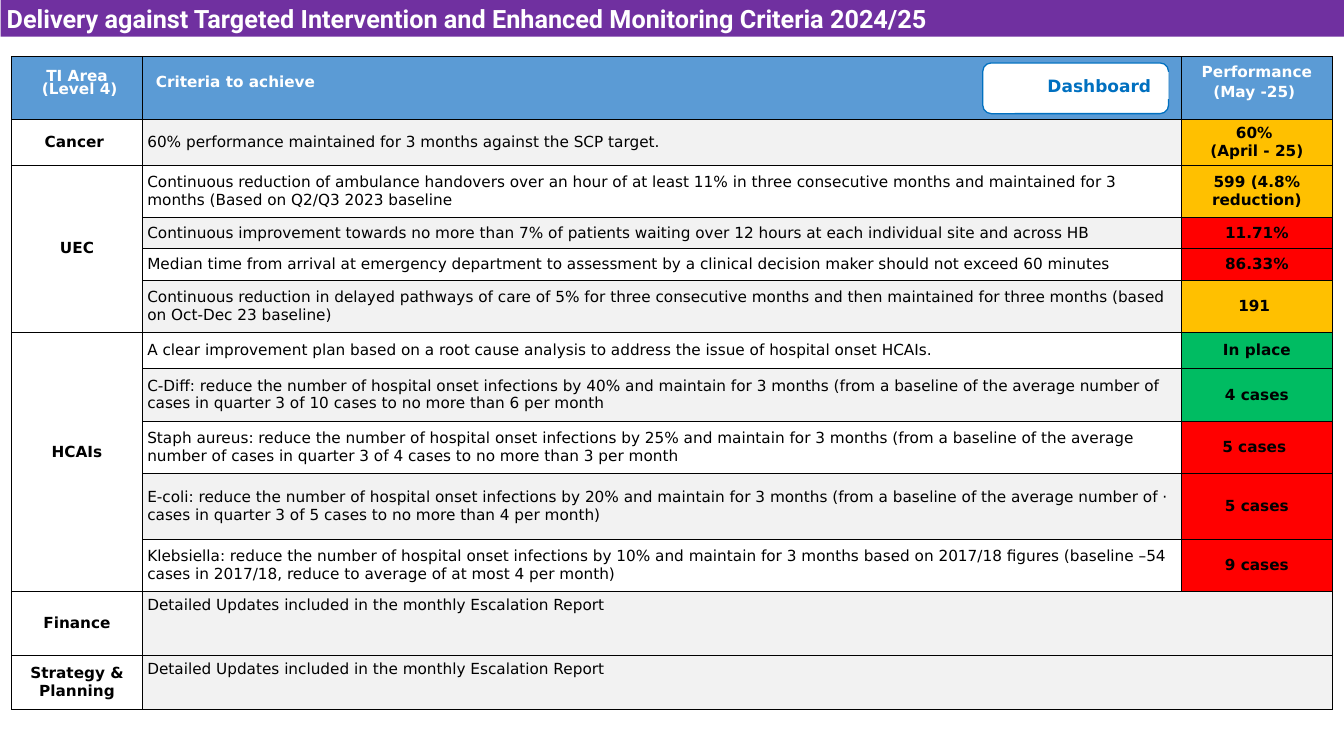
from lxml import etree
from pptx import Presentation
from pptx.dml.color import RGBColor
from pptx.enum.shapes import MSO_SHAPE
from pptx.enum.text import MSO_ANCHOR, PP_ALIGN
from pptx.oxml.ns import qn
from pptx.util import Inches, Pt

RECTANGLE, ROUNDED = MSO_SHAPE.RECTANGLE, MSO_SHAPE.ROUNDED_RECTANGLE
TOP, MIDDLE = MSO_ANCHOR.TOP, MSO_ANCHOR.MIDDLE
LEFT, CENTER, JUSTIFY = PP_ALIGN.LEFT, PP_ALIGN.CENTER, PP_ALIGN.JUSTIFY

SLIDE_W, SLIDE_H = 21.99, 12.37
BLACK, WHITE, GREY = "000000", "FFFFFF", "F2F2F2"
PURPLE, HEADER_BLUE, LINK_BLUE = "7030A0", "5B9BD5", "0070C0"
AMBER, RED, GREEN = "FFC000", "FF0000", "00BC62"
BODY_FONT, TITLE_FONT = "DejaVu Sans", "Roboto"

COLUMN_WIDTHS = [2.14, 17, 2.47]
HEADER_HEIGHT = 1.02
HEADERS = [
    (["TI Area", " (Level 4)"], CENTER, 8),
    (["Criteria to achieve"], LEFT, 0),
    (["Performance", "(May -25) "], CENTER, 16),
]
UPDATES = "Detailed Updates included in the monthly Escalation Report"
CRITERIA = [
    (0.75, "60% performance maintained for 3 months against the SCP target.",
     ["60% ", "(April - 25)"], AMBER),
    (0.85, "Continuous reduction of ambulance handovers over an hour of at least 11% in three "
     "consecutive months and maintained for 3 months (Based on Q2/Q3 2023 baseline",
     ["599 (4.8% reduction)"], AMBER),
    (0.52, "Continuous improvement towards no more than 7% of patients waiting over 12 hours "
     "at each individual site and across HB", ["11.71%"], RED),
    (0.52, "Median time from arrival at emergency department to assessment by a clinical "
     "decision maker should not exceed 60 minutes", ["86.33%"], RED),
    (0.85, "Continuous reduction in delayed pathways of care of 5% for three consecutive months "
     "and then maintained for three months (based on Oct-Dec 23 baseline)", ["191 "], AMBER),
    (0.59, "A clear improvement plan based on a root cause analysis to address the issue of "
     "hospital onset HCAIs.", ["In place"], GREEN),
    (0.86, "C-Diff: reduce the number of hospital onset infections by 40% and maintain for 3 "
     "months (from a baseline of the average number of cases in quarter 3 of 10 cases to no "
     "more than 6 per month", ["4 cases"], GREEN),
    (0.86, "Staph aureus: reduce the number of hospital onset infections by 25% and maintain for "
     "3 months (from a baseline of the average number of cases in quarter 3 of 4 cases to no "
     "more than 3 per month", ["5 cases "], RED),
    (1.07, "E-coli: reduce the number of hospital onset infections by 20% and maintain for 3 "
     "months (from a baseline of the average number of · cases in quarter 3 of 5 cases to no "
     "more than 4 per month)", ["5 cases"], RED),
    (0.86, "Klebsiella: reduce the number of hospital onset infections by 10% and maintain for 3 "
     "months based on 2017/18 figures (baseline –54 cases in 2017/18, reduce to average of at "
     "most 4 per month)", ["9 cases"], RED),
    (0.52, UPDATES, [], GREY),
    (0.52, "", [], GREY),
    (0.89, UPDATES, [], GREY),
]
AREAS = [("Cancer ", 1), ("UEC", 4), ("HCAIs", 5), ("Finance", 2), ("Strategy & Planning", 1)]
FINANCE_ROW = 11
OPEN_SIDES = {FINANCE_ROW: "B", FINANCE_ROW + 1: "T"}


def rgb(color):
    """Turn a hex string into a colour."""
    return RGBColor.from_string(color)


def write(frame, lines, size, color, bold=True, font=BODY_FONT, align=CENTER):
    """Write one paragraph per line in a single style."""
    frame.word_wrap = True
    frame.text = "\n".join(lines)
    for paragraph in frame.paragraphs:
        paragraph.alignment = align
        paragraph.font.name, paragraph.font.size = font, Pt(size)
        paragraph.font.bold, paragraph.font.color.rgb = bold, rgb(color)


def add_panel(slide, kind, box, fill, line=None):
    """Add a flat filled shape with an optional outline."""
    panel = slide.shapes.add_shape(kind, *map(Inches, box))
    panel.shadow.inherit = False
    panel.fill.solid()
    panel.fill.fore_color.rgb = rgb(fill)
    if line:
        panel.line.color.rgb = rgb(line)
        panel.line.width = Pt(1.5)
    else:
        panel.line.fill.background()
    return panel


def style_cell(cell, fill, margins=(0.08, 0.08), open_sides=""):
    """Give a cell its fill, its margins and black borders on the closed sides."""
    properties = cell._tc.get_or_add_tcPr()
    for side in "LRTB":
        border = etree.SubElement(properties, qn(f"a:ln{side}"), w=str(Pt(1)))
        if side in open_sides:
            etree.SubElement(border, qn("a:noFill"))
        else:
            solid = etree.SubElement(border, qn("a:solidFill"))
            etree.SubElement(solid, qn("a:srgbClr"), val=BLACK)
    cell.fill.solid()
    cell.fill.fore_color.rgb = rgb(fill)
    cell.margin_left = cell.margin_right = Inches(margins[0])
    cell.margin_top = cell.margin_bottom = Inches(margins[1])
    cell.vertical_anchor = MIDDLE


def add_title(slide, box):
    """Draw the title band."""
    band = add_panel(slide, RECTANGLE, box, PURPLE)
    band.text_frame.vertical_anchor = TOP
    write(band.text_frame,
          ["Delivery against Targeted Intervention and Enhanced Monitoring Criteria 2024/25"],
          29.7, WHITE, font=TITLE_FONT, align=JUSTIFY)


def fill_header(table):
    """Fill the heading row."""
    for cell, (lines, align, gap) in zip(table.rows[0].cells, HEADERS):
        style_cell(cell, HEADER_BLUE, (0.22, 0.11))
        write(cell.text_frame, lines, 18, WHITE, align=align)
        for paragraph in cell.text_frame.paragraphs:
            paragraph.line_spacing = Pt(8)
        cell.text_frame.paragraphs[-1].space_before = Pt(gap)


def fill_criteria(table):
    """Fill the criteria with their performance ratings."""
    for row, (_, criterion, result, rating) in enumerate(CRITERIA, 1):
        area, wording, performance = table.rows[row].cells
        open_sides = OPEN_SIDES.get(row, "")
        style_cell(area, WHITE)
        style_cell(wording, GREY if row % 2 or not result else WHITE, open_sides=open_sides)
        style_cell(performance, rating, open_sides=open_sides)
        write(wording.text_frame, [criterion], 18, BLACK, bold=False, align=LEFT)
        if result:
            write(performance.text_frame, result, 18, BLACK)
        else:
            wording.vertical_anchor = TOP
            wording.merge(performance)


def merge_areas(table):
    """Name each area and merge the rows it spans."""
    row = 1
    for name, count in AREAS:
        area = table.cell(row, 0)
        write(area.text_frame, [name], 18, BLACK)
        if name == "HCAIs":
            area.margin_bottom = Inches(0.4)
        if count > 1:
            area.merge(table.cell(row + count - 1, 0))
        row += count


def add_criteria_table(slide, left, top):
    """Draw the criteria table from its top left corner."""
    heights = [HEADER_HEIGHT] + [criterion[0] for criterion in CRITERIA]
    frame = slide.shapes.add_table(len(heights), len(COLUMN_WIDTHS), Inches(left), Inches(top),
                                   Inches(sum(COLUMN_WIDTHS)), Inches(sum(heights)))
    table = frame.table
    table.first_row = table.horz_banding = False
    for column, width in zip(table.columns, COLUMN_WIDTHS):
        column.width = Inches(width)
    for row, height in zip(table.rows, heights):
        row.height = Inches(height)
    fill_header(table)
    fill_criteria(table)
    merge_areas(table)


def add_dashboard_button(slide, left, top, width, height):
    """Draw the dashboard button with its label on the right."""
    add_panel(slide, ROUNDED, (left, top, width, height), WHITE, LINK_BLUE)
    label_width = 2.08
    label = add_panel(slide, RECTANGLE,
                      (left + width - label_width, top + 0.15, label_width, 0.44), WHITE)
    label.text_frame.vertical_anchor = TOP
    write(label.text_frame, ["Dashboard"], 20, LINK_BLUE, align=LEFT)


def main():
    """Build and save the slide."""
    deck = Presentation()
    deck.slide_width, deck.slide_height = Inches(SLIDE_W), Inches(SLIDE_H)
    slide = deck.slides.add_slide(deck.slide_layouts[6])
    add_criteria_table(slide, 0.19, 0.93)
    add_title(slide, (0.01, 0, SLIDE_W, 0.6))
    add_dashboard_button(slide, 16.08, 1.03, 3.04, 0.83)
    deck.save("out.pptx")


if __name__ == "__main__":
    main()
